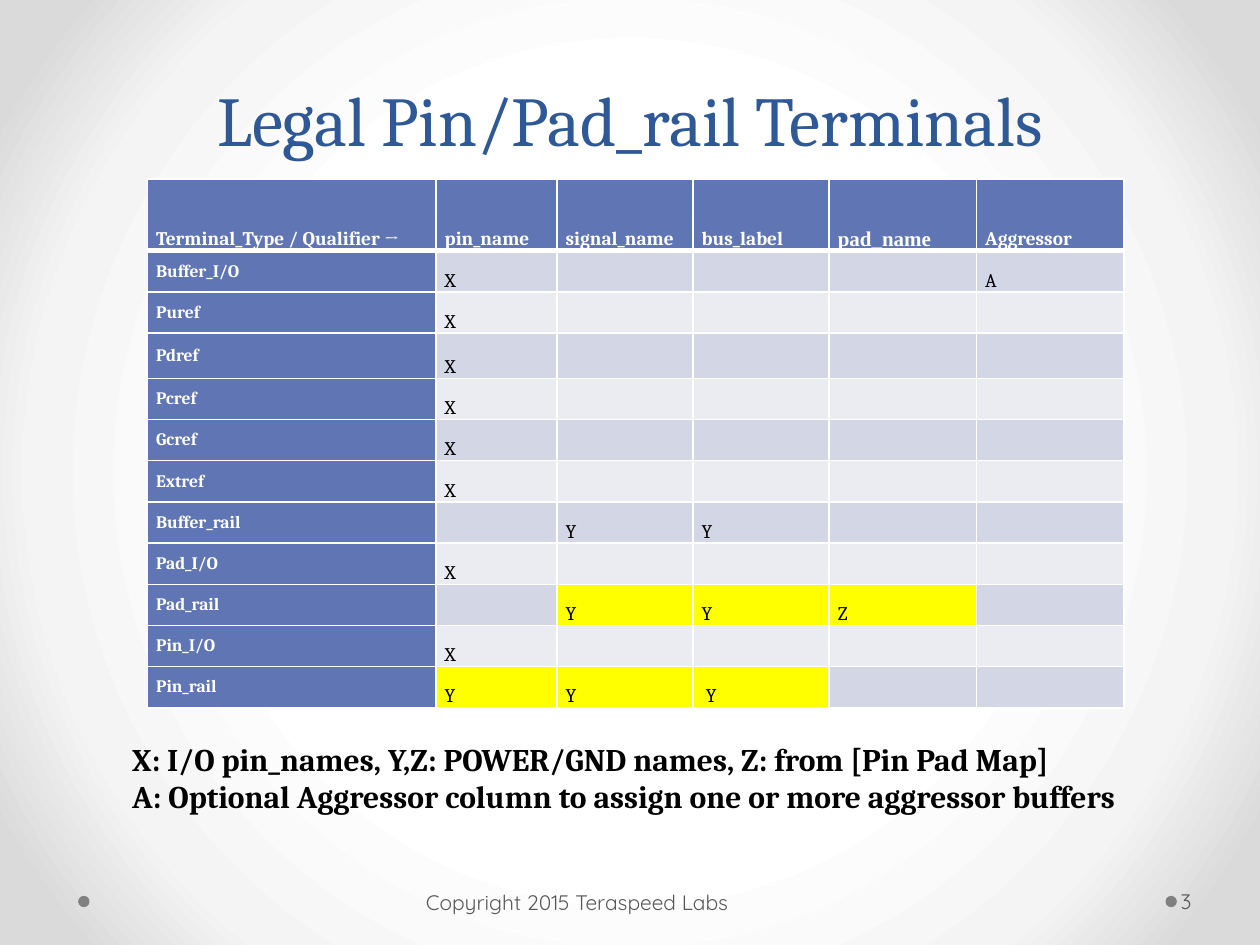
"""Build the slide listing the legal terminals for pins and pad rails."""
from dataclasses import dataclass

from lxml import etree
from pptx import Presentation
from pptx import util as u
from pptx.dml.color import RGBColor
from pptx.enum import shapes, text
from pptx.oxml import parse_xml
from pptx.oxml.ns import nsdecls, qn

WIDTH, HEIGHT = 10, 7.5
WHITE = RGBColor(0xFF, 0xFF, 0xFF)
BLACK = RGBColor(0, 0, 0)
TITLE_BLUE = RGBColor(0x2F, 0x58, 0x97)
HEAD_BLUE = RGBColor(0x60, 0x76, 0xB4)
BANDS = RGBColor(0xD2, 0xD6, 0xE5), RGBColor(0xEA, 0xEC, 0xF2)
YELLOW = RGBColor(0xFF, 0xFF, 0)
DOT_GRAY = RGBColor(0x80, 0x80, 0x80)
FOOT_GRAY = RGBColor(0x59, 0x59, 0x59)
GRADIENT = (50, WHITE), (76, RGBColor(0xF4, 0xF4, 0xF4)), (92, RGBColor(0xDA, 0xDA, 0xDA))

SERIF, SANS = "Cambria", "Quicksand"
TOP, MIDDLE, BOTTOM = text.MSO_ANCHOR.TOP, text.MSO_ANCHOR.MIDDLE, text.MSO_ANCHOR.BOTTOM
COLUMNS = 2.29, 0.96, 1.08, 1.08, 1.17, 1.17
TABLE_HEIGHT, HEAD_HEIGHT, TALL_HEIGHT = 4.2, 0.57, 0.36
HEADERS = ("Terminal_Type / Qualifier →", "pin_name", "signal_name", "bus_label",
           "pad_name", "Aggressor")


@dataclass
class Terminal:
    """One table row: its name, marks by column, and highlighted columns."""
    name: str
    marks: dict[int, str]
    highlights: tuple[int, ...] = ()
    tall: bool = False


@dataclass
class Note:
    """One text box, placed in inches, with its margins left, top, right, bottom."""
    lines: tuple[str, ...]
    box: tuple[float, float, float, float]
    margins: tuple[float, float, float, float]
    anchor: text.MSO_ANCHOR
    style: dict


TERMINALS = (
    Terminal("Buffer_I/O", {1: "X", 5: "A"}),
    Terminal("Puref", {1: "X"}),
    Terminal("Pdref", {1: "X"}, tall=True),
    Terminal("Pcref", {1: "X"}),
    Terminal("Gcref", {1: "X"}),
    Terminal("Extref", {1: "X"}),
    Terminal("Buffer_rail", {2: "Y", 3: "Y"}),
    Terminal("Pad_I/O", {1: "X"}),
    Terminal("Pad_rail", {2: "Y", 3: "Y", 4: "Z"}, (2, 3, 4)),
    Terminal("Pin_I/O", {1: "X"}),
    Terminal("Pin_rail", {1: "Y", 2: "Y", 3: " Y"}, (1, 2, 3)),
)
FOOT = dict(size=12, font=SANS, color=FOOT_GRAY)
NOTES = (
    Note(("3",), (9.34, 6.95, 0.61, 0.4), (0.03, 0.05, 0.05, 0.05), MIDDLE, FOOT),
    Note(("Copyright 2015 Teraspeed Labs",), (3.33, 6.96, 3.11, 0.4),
         (0.05, 0.05, 0.1, 0.05), MIDDLE, FOOT),
    Note(("X: I/O pin_names, Y,Z: POWER/GND names, Z: from [Pin Pad Map]",
          "A: Optional Aggressor column to assign one or more aggressor buffers"),
         (0.95, 5.82, 8.58, 0.71), (0.1, 0.05, 0.1, 0.05), TOP,
         dict(size=18, bold=True)),
)


def write(p, words: str, *, size: float, font: str = SERIF,
          color: RGBColor = BLACK, bold: bool = False) -> None:
    """Add one formatted run to a paragraph."""
    r = p.add_run()
    r.text = words
    r.font.size, r.font.name, r.font.bold = u.Pt(size), font, bold
    r.font.color.rgb = color


def set_background(s) -> None:
    """Give the slide a circular gradient."""
    stops = "".join(f'<a:gs pos="{pos * 1000}"><a:srgbClr val="{color}"/></a:gs>'
                    for pos, color in GRADIENT)
    s.element.cSld.insert(0, parse_xml(
        f'<p:bg {nsdecls("p", "a")}><p:bgPr><a:gradFill rotWithShape="1">'
        f'<a:gsLst>{stops}</a:gsLst><a:path path="circle">'
        '<a:fillToRect l="50000" t="50000" r="50000" b="50000"/></a:path>'
        '</a:gradFill><a:effectLst/></p:bgPr></p:bg>'))


def add_dot(s, left: float) -> None:
    """Draw one footer dot."""
    sp = s.shapes.add_shape(shapes.MSO_SHAPE.OVAL, u.Inches(left), u.Inches(7.11),
                            u.Inches(0.09), u.Inches(0.09))
    sp.shadow.inherit = False
    sp.fill.solid()
    sp.fill.fore_color.rgb = DOT_GRAY
    sp.line.fill.background()


def set_title(s, words: str) -> None:
    """Place and format the title placeholder."""
    sp = s.shapes.title
    sp.left, sp.top = u.Inches(0.05 * WIDTH), 0
    sp.width, sp.height = u.Inches(0.9 * WIDTH), u.Inches(1.75)
    tf = sp.text_frame
    tf.vertical_anchor = MIDDLE
    p = tf.paragraphs[0]
    p.alignment, p.line_spacing = text.PP_ALIGN.CENTER, u.Pt(58)
    write(p, words, size=40, color=TITLE_BLUE)


def add_note(s, note: Note) -> None:
    """Add one text box."""
    tf = s.shapes.add_textbox(*map(u.Inches, note.box)).text_frame
    tf.word_wrap, tf.vertical_anchor = True, note.anchor
    (tf.margin_left, tf.margin_top,
     tf.margin_right, tf.margin_bottom) = map(u.Inches, note.margins)
    for i, line in enumerate(note.lines):
        p = tf.add_paragraph() if i else tf.paragraphs[0]
        write(p, line, **note.style)


def fill_cell(cell, words: str, fill: RGBColor, anchor: text.MSO_ANCHOR = BOTTOM,
              below: float = 1, **style) -> None:
    """Set the borders, fill and text of one cell."""
    cell.margin_left = cell.margin_right = u.Inches(0.07)
    cell.margin_top = cell.margin_bottom = 0
    cell.vertical_anchor = anchor
    tc_pr = cell._tc.get_or_add_tcPr()
    for side, width in zip("LRTB", (1, 1, 1, below)):
        tc_pr.append(parse_xml(
            f'<a:ln{side} {nsdecls("a")} w="{u.Pt(width)}"><a:solidFill>'
            f'<a:srgbClr val="{WHITE}"/></a:solidFill></a:ln{side}>'))
    cell.fill.solid()
    cell.fill.fore_color.rgb = fill
    p = cell.text_frame.paragraphs[0]
    if words:
        write(p, words, **style)
    else:
        etree.SubElement(p._p, qn("a:endParaRPr"), sz="1100")


def add_terminal_table(s) -> None:
    """Draw the table of terminals and their qualifiers."""
    table = s.shapes.add_table(len(TERMINALS) + 1, len(COLUMNS), u.Inches(1.17), u.Inches(1.42),
                               u.Inches(sum(COLUMNS)), u.Inches(TABLE_HEIGHT)).table
    for column, width in zip(table.columns, COLUMNS):
        column.width = u.Inches(width)
    table.rows[0].height = u.Inches(HEAD_HEIGHT)
    row_height = (TABLE_HEIGHT - HEAD_HEIGHT - TALL_HEIGHT) / (len(TERMINALS) - 1)
    for col, words in enumerate(HEADERS):
        look = (dict(size=12, font="Times New Roman") if words == "pad_name"
                else dict(size=11))
        fill_cell(table.cell(0, col), words, HEAD_BLUE, below=3,
                  color=WHITE, bold=True, **look)
    for row, terminal in enumerate(TERMINALS, 1):
        table.rows[row].height = u.Inches(TALL_HEIGHT if terminal.tall else row_height)
        fill_cell(table.cell(row, 0), terminal.name, HEAD_BLUE, MIDDLE,
                  size=10, color=WHITE, bold=True)
        for col in range(1, len(COLUMNS)):
            fill = YELLOW if col in terminal.highlights else BANDS[(row - 1) % 2]
            fill_cell(table.cell(row, col), terminal.marks.get(col, ""), fill, size=11)


def main() -> None:
    """Build and save the presentation."""
    prs = Presentation()
    prs.slide_width, prs.slide_height = u.Inches(WIDTH), u.Inches(HEIGHT)
    s = prs.slides.add_slide(prs.slide_layouts[5])
    set_background(s)
    for left in (9.25, 0.62):
        add_dot(s, left)
    set_title(s, "Legal Pin/Pad_rail Terminals")
    add_terminal_table(s)
    for note in NOTES:
        add_note(s, note)
    prs.save("out.pptx")


if __name__ == "__main__":
    main()
